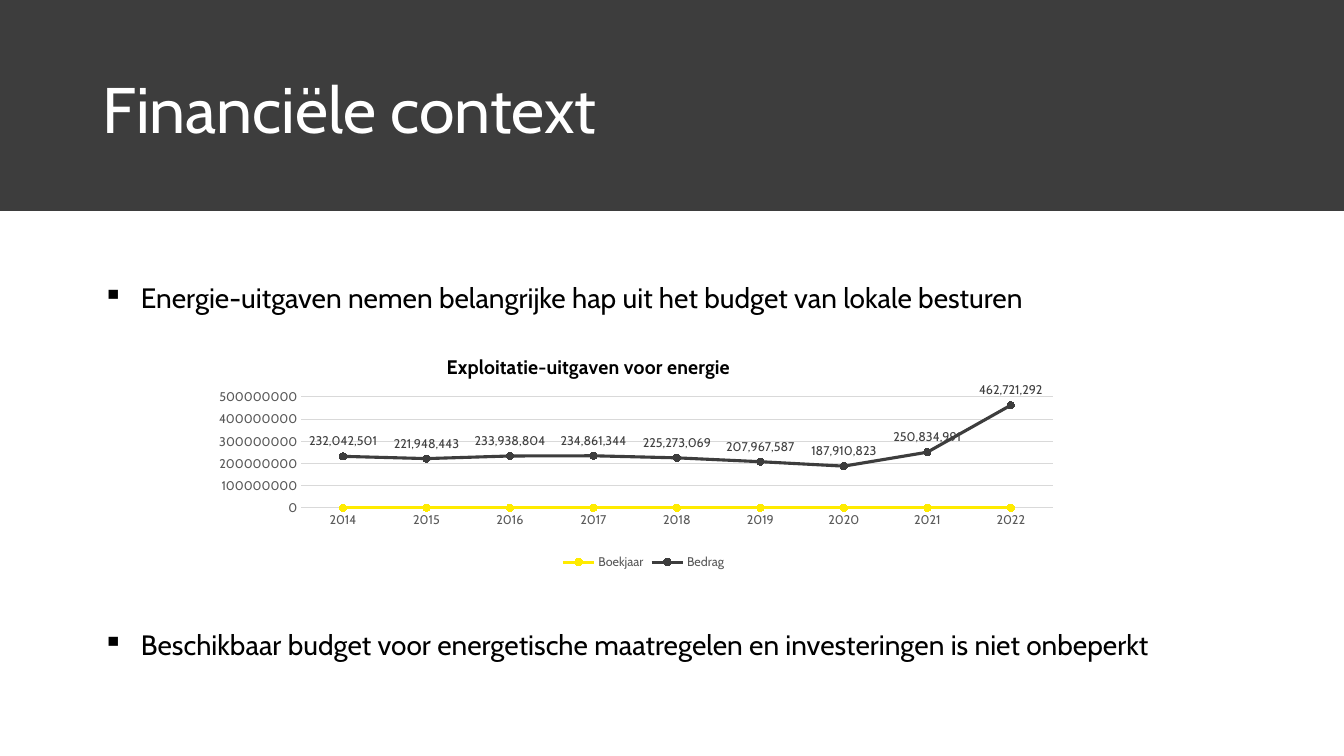
from lxml import etree
from pptx import Presentation
from pptx.chart.data import CategoryChartData
from pptx.dml.color import RGBColor
from pptx.enum.chart import (XL_CHART_TYPE, XL_LABEL_POSITION, XL_LEGEND_POSITION,
                             XL_MARKER_STYLE, XL_TICK_MARK)
from pptx.enum.shapes import MSO_SHAPE
from pptx.enum.text import MSO_ANCHOR
from pptx.oxml.ns import qn
from pptx.util import Pt

RECTANGLE = MSO_SHAPE.RECTANGLE
LINE_MARKERS = XL_CHART_TYPE.LINE_MARKERS
LABEL_ABOVE = XL_LABEL_POSITION.ABOVE
LEGEND_BOTTOM = XL_LEGEND_POSITION.BOTTOM
CIRCLE = XL_MARKER_STYLE.CIRCLE
NO_TICK = XL_TICK_MARK.NONE
MIDDLE, TOP = MSO_ANCHOR.MIDDLE, MSO_ANCHOR.TOP

WHITE = RGBColor(0xFF, 0xFF, 0xFF)
BLACK = RGBColor(0x00, 0x00, 0x00)
CHARCOAL = RGBColor(0x3D, 0x3D, 0x3D)
YELLOW = RGBColor(0xFF, 0xEB, 0x00)
AXIS_GRAY = RGBColor(0x59, 0x59, 0x59)
LABEL_GRAY = RGBColor(0x40, 0x40, 0x40)
GRID_GRAY = RGBColor(0xD9, 0xD9, 0xD9)

EMU_PER_PX = 914400 / 100.8
FONT = "Cabin"
BULLETS = [
    "Energie-uitgaven nemen belangrijke hap uit het budget van lokale besturen",
    "Beschikbaar budget voor energetische maatregelen en investeringen is niet onbeperkt",
]
YEARS = [str(year) for year in range(2014, 2023)]
AMOUNTS = [232042501, 221948443, 233938804, 234861344, 225273069,
           207967587, 187910823, 250834991, 462721292]
SERIES = [("Boekjaar", [0] * len(YEARS), YELLOW), ("Bedrag", AMOUNTS, CHARCOAL)]


def px(length):
    """Turn pixels into EMU."""
    return round(length * EMU_PER_PX)


def set_values(target, values):
    """Set every attribute named in a dict of format values."""
    for name, value in values.items():
        setattr(target, name, value)


def set_font(font, size, color, bold=False):
    """Apply the slide's typeface with a size and colour."""
    set_values(font, {"name": FONT, "size": Pt(size), "bold": bold})
    font.color.rgb = color


def add_text_frame(slide, box, anchor):
    """Add a wrapping text box and return its frame."""
    frame = slide.shapes.add_textbox(*map(px, box)).text_frame
    set_values(frame, {"word_wrap": True, "vertical_anchor": anchor})
    return frame


def add_header(slide, box, title):
    """Draw the dark band with the slide title."""
    left, top, width, height = box
    band = slide.shapes.add_shape(RECTANGLE, *map(px, box))
    band.shadow.inherit = False
    band.fill.solid()
    band.fill.fore_color.rgb = CHARCOAL
    band.line.fill.background()
    title_box = (left + 93, top + 40, width - 185, height - 65)
    paragraph = add_text_frame(slide, title_box, MIDDLE).paragraphs[0]
    paragraph.text = title
    paragraph.line_spacing = 0.9
    set_font(paragraph.font, 46, WHITE)


def add_bullets(slide, box, texts, gap):
    """Write the bullets, with a gap between them that holds the chart."""
    frame = add_text_frame(slide, box, TOP)
    for index, text in enumerate(texts):
        paragraph = frame.add_paragraph() if index else frame.paragraphs[0]
        paragraph.text = text
        properties = paragraph._p.get_or_add_pPr()
        properties.set("marL", str(px(38)))
        properties.set("indent", str(px(-38)))
        etree.SubElement(properties, qn("a:buChar"), char="▪")
        paragraph.line_spacing = 1.2
        if index:
            paragraph.space_before = Pt(gap)
        set_font(paragraph.font, 20, BLACK)


def set_layout(parent, position, values):
    """Give a chart part a manual layout in fractions of the chart."""
    for existing in parent.findall(qn("c:layout")):
        parent.remove(existing)
    layout = etree.Element(qn("c:layout"))
    manual = etree.SubElement(layout, qn("c:manualLayout"))
    for name, value in values.items():
        etree.SubElement(manual, qn(f"c:{name}"), val=str(value))
    parent.insert(position, layout)


def format_axes(chart):
    """Style both axes and the gridlines."""
    category_axis, value_axis = chart.category_axis, chart.value_axis
    for axis in (category_axis, value_axis):
        set_values(axis, {"major_tick_mark": NO_TICK, "minor_tick_mark": NO_TICK})
        set_font(axis.tick_labels.font, 9, AXIS_GRAY)
    set_values(value_axis, {"minimum_scale": 0, "maximum_scale": 500000000,
                            "major_unit": 100000000, "has_major_gridlines": True})
    set_values(value_axis.tick_labels, {"number_format": "0", "number_format_is_linked": False})
    value_axis.format.line.fill.background()
    for line in (category_axis.format.line, value_axis.major_gridlines.format.line):
        line.color.rgb = GRID_GRAY
        line.width = Pt(0.75)


def format_series(series, color):
    """Style one line and its markers."""
    series.smooth = False
    series.format.line.color.rgb = color
    series.format.line.width = Pt(2.25)
    set_values(series.marker, {"style": CIRCLE, "size": 5})
    series.marker.format.fill.solid()
    series.marker.format.fill.fore_color.rgb = color
    series.marker.format.line.color.rgb = color


def add_spending_chart(slide, box, title):
    """Chart the yearly energy spending."""
    data = CategoryChartData()
    data.categories = YEARS
    for name, values, _ in SERIES:
        data.add_series(name, values)
    chart = slide.shapes.add_chart(LINE_MARKERS, *map(px, box), data).chart
    set_font(chart.font, 10, BLACK)
    set_values(chart, {"has_title": True, "has_legend": True})

    paragraph = chart.chart_title.text_frame.paragraphs[0]
    paragraph.text = title
    set_font(paragraph.runs[0].font, 14, BLACK, bold=True)
    title_element = chart.element.find(".//" + qn("c:title"))
    set_layout(title_element, 1, {"xMode": "edge", "yMode": "edge", "x": 0.26, "y": 0.05})
    plot_area = chart.element.find(".//" + qn("c:plotArea"))
    set_layout(plot_area, 0, {"layoutTarget": "inner", "xMode": "edge", "yMode": "edge",
                              "x": 0.09, "y": 0.25, "w": 0.9, "h": 0.47})

    set_values(chart.legend, {"position": LEGEND_BOTTOM, "include_in_layout": False})
    set_font(chart.legend.font, 9, AXIS_GRAY)
    format_axes(chart)
    plot = chart.plots[0]
    plot.vary_by_categories = False
    for series, (_, _, color) in zip(plot.series, SERIES):
        format_series(series, color)

    labels = plot.series[1].data_labels
    set_values(labels, {"show_value": True, "position": LABEL_ABOVE,
                        "number_format": "#,##0", "number_format_is_linked": False})
    set_font(labels.font, 9, LABEL_GRAY)


def main():
    """Build and save the slide."""
    presentation = Presentation()
    set_values(presentation, {"slide_width": px(1344), "slide_height": px(756)})
    slide = presentation.slides.add_slide(presentation.slide_layouts[6])
    add_header(slide, (0, 0, 1344, 211), "Financiële context")
    add_bullets(slide, (93, 269, 1159, 412), BULLETS, gap=219)
    add_spending_chart(slide, (219, 338, 842, 236), "Exploitatie-uitgaven voor energie")
    presentation.save("out.pptx")


if __name__ == "__main__":
    main()
